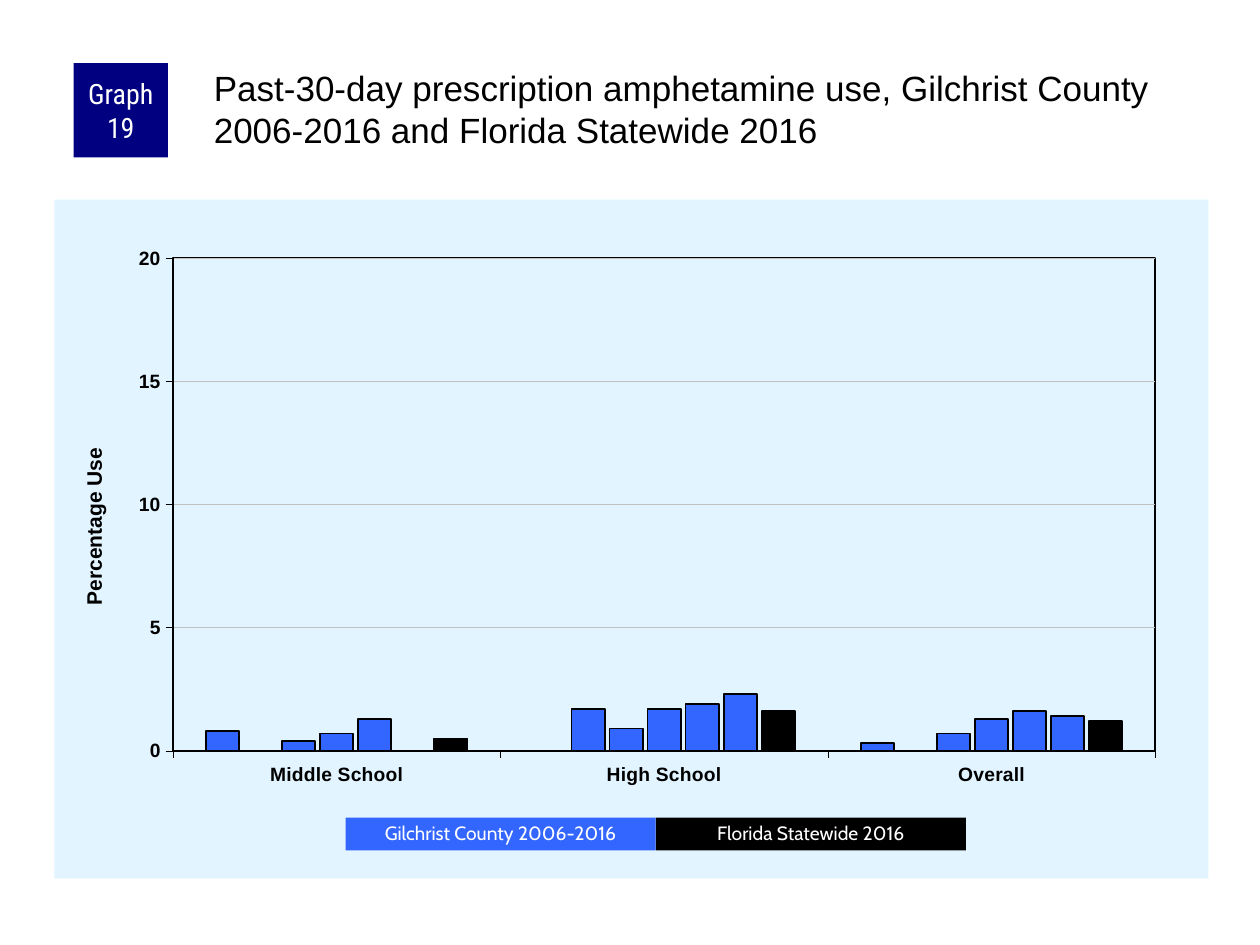
import dataclasses
import pptx
import pptx.chart.data
import pptx.dml.color
import pptx.enum.chart
import pptx.enum.shapes
import pptx.enum.text
import pptx.oxml
import pptx.util

Pt = pptx.util.Pt
NS = ('xmlns:c="http://schemas.openxmlformats.org/drawingml/2006/chart" '
      'xmlns:a="http://schemas.openxmlformats.org/drawingml/2006/main"')
BLUE, BLACK, WHITE = "3366FF", "000000", "FFFFFF"
CATS = ["Middle School", "High School", "Overall"]
ROWS = [(0.8, 0, 0.3), (0, 1.7, 0), (0.4, 0.9, 0.7), (0.7, 1.7, 1.3),
        (1.3, 1.9, 1.6), (0, 2.3, 1.4), (0.5, 1.6, 1.2)]


@dataclasses.dataclass
class Box:
    text: str
    left: float
    top: float
    width: float
    height: float
    fill: str
    face: str
    size: float
    inset: float
    space: float


BOXES = [
    Box("Graph 19", 42, 36, 54, 54, "000080", "Roboto Condensed", 16, 3.6, 1),
    Box("Gilchrist County 2006-2016", 197.5, 467.2, 177.2, 18.8,
        BLUE, "Cabin", 11, 7.2, 0.9),
    Box("Florida Statewide 2016", 374.8, 467.2, 177.2, 18.8,
        BLACK, "Cabin", 11, 7.2, 0.9),
]


def rgb(code: str) -> pptx.dml.color.RGBColor:
    return pptx.dml.color.RGBColor.from_string(code)


def set_font(font, face: str, size: float, color: str, bold: bool = False) -> None:
    font.name, font.size, font.bold = face, Pt(size), bold
    font.color.rgb = rgb(color)


def set_line(line, color: str, width: float) -> None:
    line.color.rgb = rgb(color)
    line.width = Pt(width)


def draw_box(slide, box: Box) -> None:
    shape = slide.shapes.add_shape(
        pptx.enum.shapes.MSO_SHAPE.RECTANGLE, Pt(box.left), Pt(box.top),
        Pt(box.width), Pt(box.height))
    shape.shadow.inherit = False
    shape.fill.solid()
    shape.fill.fore_color.rgb = rgb(box.fill)
    shape.line.fill.background()
    frame = shape.text_frame
    frame.word_wrap = True
    frame.vertical_anchor = pptx.enum.text.MSO_ANCHOR.MIDDLE
    frame.margin_left = frame.margin_right = Pt(box.inset)
    frame.margin_top = frame.margin_bottom = Pt(0)
    para = frame.paragraphs[0]
    para.text = box.text
    para.alignment = pptx.enum.text.PP_ALIGN.CENTER
    para.line_spacing = box.space
    set_font(para.font, box.face, box.size, WHITE)


def layout(x: float, y: float, w: float = 0, h: float = 0):
    target = '<c:layoutTarget val="inner"/>' if w else ""
    size = f'<c:w val="{w}"/><c:h val="{h}"/>' if w else ""
    return pptx.oxml.parse_xml(
        f'<c:layout {NS}><c:manualLayout>{target}<c:xMode val="edge"/>'
        f'<c:yMode val="edge"/><c:x val="{x}"/><c:y val="{y}"/>{size}'
        '</c:manualLayout></c:layout>')


def look(fill: str, line: str):
    return pptx.oxml.parse_xml(
        f'<c:spPr {NS}>{fill}<a:ln w="{Pt(1)}">{line}</a:ln></c:spPr>')


def solid(color: str) -> str:
    return f'<a:solidFill><a:srgbClr val="{color}"/></a:solidFill>'


def draw_chart(slide) -> None:
    data = pptx.chart.data.CategoryChartData()
    data.categories = CATS
    for num, row in enumerate(ROWS, 1):
        data.add_series(f"Series {num}", row)
    chart = slide.shapes.add_chart(
        pptx.enum.chart.XL_CHART_TYPE.COLUMN_CLUSTERED,
        Pt(31), Pt(114), Pt(659.5), Pt(388), data).chart
    chart.has_legend = chart.has_title = False
    set_font(chart.font, "Arial", 8, BLACK)

    # Bars: county years in blue, the state in black
    plot = chart.plots[0]
    plot.gap_width, plot.overlap, plot.vary_by_categories = 200, -15, False
    for num, series in enumerate(plot.series, 1):
        series.invert_if_negative = False
        series.format.fill.solid()
        series.format.fill.fore_color.rgb = rgb(BLACK if num == len(ROWS) else BLUE)
        set_line(series.format.line, BLACK, 1)

    # Axes
    for axis in (chart.category_axis, chart.value_axis):
        axis.major_tick_mark = pptx.enum.chart.XL_TICK_MARK.OUTSIDE
        axis.minor_tick_mark = pptx.enum.chart.XL_TICK_MARK.NONE
        set_font(axis.tick_labels.font, "Arial", 11, BLACK, True)
        set_line(axis.format.line, BLACK, 0.25)
    axis = chart.value_axis
    axis.minimum_scale, axis.maximum_scale, axis.major_unit = 0, 20, 5
    set_line(axis.major_gridlines.format.line, "C0C0C0", 0.25)
    title = axis.axis_title
    para = title.text_frame.paragraphs[0]
    para.text = "Percentage Use"
    set_font(para.font, "Arial", 12, BLACK, True)
    for old in title._element.xpath("c:layout"):
        title._element.remove(old)
    title._element.xpath("c:tx")[0].addnext(layout(0.02, 0.36))

    # Plot place, frame and background
    root = chart._chartSpace
    area = root.xpath("c:chart/c:plotArea")[0]
    for old in area.xpath("c:layout"):
        area.remove(old)
    area.insert(0, layout(0.103, 0.086, 0.851, 0.726))
    area.append(look("<a:noFill/>", solid(BLACK)))
    root.xpath("c:chart")[0].addnext(look(solid("E1F4FF"), "<a:noFill/>"))


def draw_title(slide) -> None:
    frame = slide.shapes.add_textbox(Pt(120), Pt(36), Pt(570), Pt(60)).text_frame
    frame.word_wrap = True
    frame.margin_left = frame.margin_top = Pt(2.2)
    frame.margin_right = frame.margin_bottom = Pt(0)
    para = frame.paragraphs[0]
    para.text = ("Past-30-day prescription amphetamine use, Gilchrist County "
                 "2006-2016 and Florida Statewide 2016")
    set_font(para.font, "Arial", 20, BLACK)


def main() -> None:
    deck = pptx.Presentation()
    deck.slide_width, deck.slide_height = Pt(720), Pt(540)
    slide = deck.slides.add_slide(deck.slide_layouts[6])
    draw_chart(slide)
    draw_title(slide)
    for box in BOXES:
        draw_box(slide, box)
    deck.save("out.pptx")


if __name__ == "__main__":
    main()
